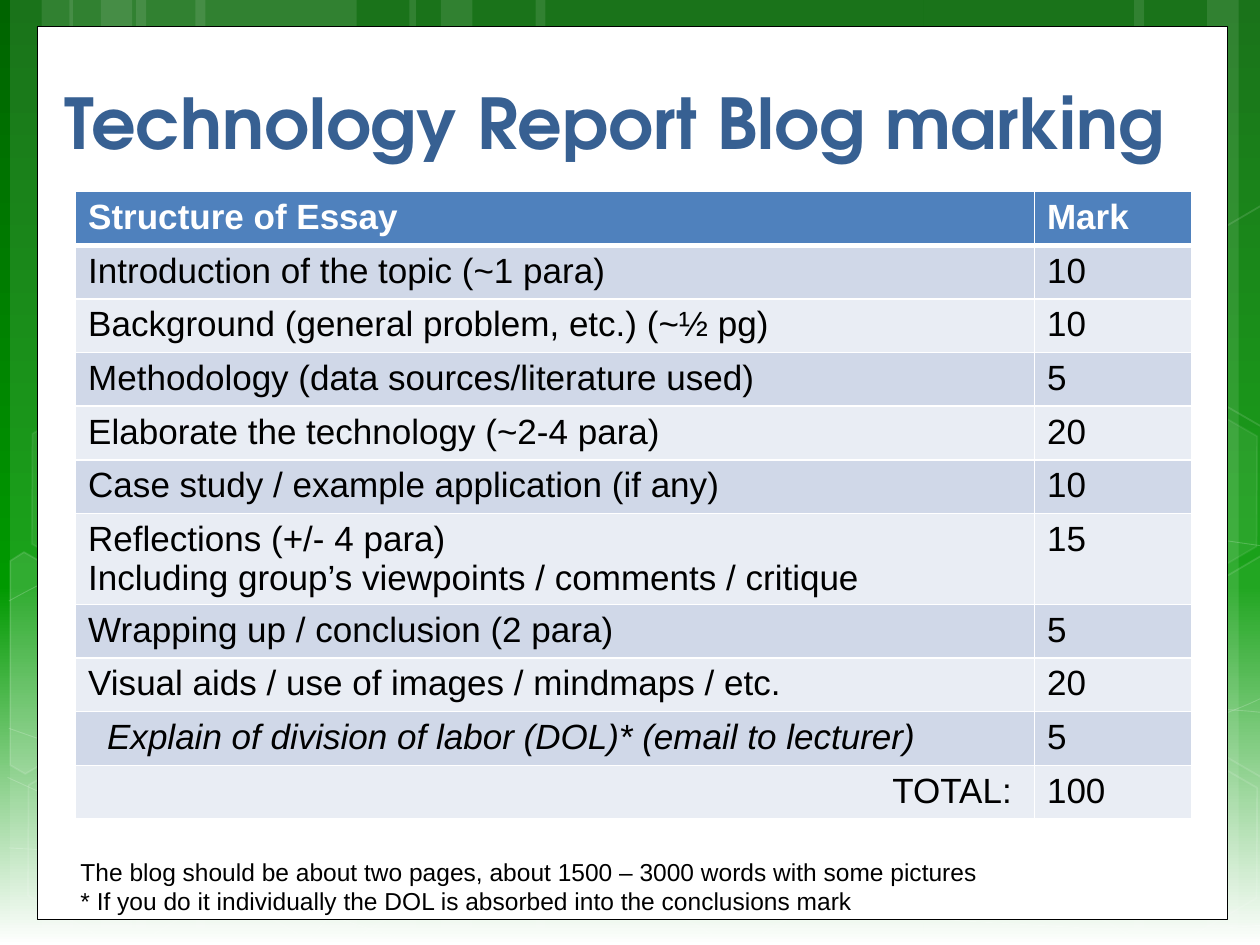
import math
from copy import deepcopy

from lxml import etree
from pptx import Presentation
from pptx import util as u
from pptx.dml.color import RGBColor
from pptx.enum import shapes, text
from pptx.oxml import ns

WHITE = RGBColor(0xFF, 0xFF, 0xFF)
BLACK = RGBColor(0, 0, 0)
DARK_GREEN = RGBColor(0, 0x64, 0)
GREEN = RGBColor(0, 0x99, 0)
TITLE_BLUE = RGBColor(0x37, 0x60, 0x92)
HEADER_BLUE = RGBColor(0x4F, 0x81, 0xBD)
BAND_DARK = RGBColor(0xD0, 0xD8, 0xE8)
BAND_LIGHT = RGBColor(0xE9, 0xED, 0xF4)

# Background stripes: left, width, rotation
STRIPES = [
    (1.08, 1.75, 0), (0.08, 0.5, 0), (0.33, 0.83, 0), (1.55, 1.75, 0),
    (0.55, 0.5, 0), (0.8, 0.83, 0), (7.33, 1.75, 180), (9.58, 0.5, 180),
    (9, 0.83, 180), (4.25, 3.08, 0), (3.25, 0.5, 0), (3.5, 0.83, 0),
]
# Each curve: a start point, then three points per Bezier segment
CURVES = [
    [(0.07, 6.73), (0.61, 6.76), (1.15, 6.79), (1.9, 6.78), (2.65, 6.77),
     (3.58, 6.75), (4.58, 6.65), (5.58, 6.55), (7, 6.36), (7.92, 6.17),
     (8.83, 5.98), (9.77, 5.68), (10.07, 5.51)],
    [(0.07, 4.77), (0.36, 4.61), (0.65, 4.46), (1.21, 4.31), (1.78, 4.16),
     (2.59, 3.94), (3.47, 3.87), (4.36, 3.8), (5.44, 3.79), (6.54, 3.87),
     (7.64, 3.95), (9.47, 4.26), (10.07, 4.34)],
    [(0.06, 6.17), (1.27, 6.72), (2.47, 7.27), (3.34, 7.49)],
    [(0.07, 5.78), (0.38, 5.89), (0.7, 6), (1.28, 6.16), (1.86, 6.31),
     (2.73, 6.56), (3.57, 6.73), (4.4, 6.9), (5.45, 7.08), (6.28, 7.18),
     (7.11, 7.29), (8, 7.33), (8.53, 7.36), (9.05, 7.4), (9.19, 7.38),
     (9.45, 7.38), (9.71, 7.37), (9.89, 7.35), (10.07, 7.34)],
    [(2.42, 7.49), (2.6, 7.29), (2.78, 7.09), (3.02, 6.91), (3.26, 6.73),
     (3.6, 6.53), (3.88, 6.39), (4.16, 6.25), (4.33, 6.19), (4.7, 6.09),
     (5.06, 5.99), (5.73, 5.85), (6.08, 5.78), (6.44, 5.71), (6.49, 5.71),
     (6.8, 5.69), (7.11, 5.66), (7.6, 5.63), (7.94, 5.62), (8.29, 5.61),
     (8.86, 5.62), (8.86, 5.62), (9.1, 5.62), (9.3, 5.62), (9.53, 5.62),
     (9.71, 5.63), (9.88, 5.64), (9.97, 5.65), (10.06, 5.66),
     (10.03, 5.65), (10.06, 5.66)],
]
# Hexagons: left, top, fill opacity, line opacity
HEXAGONS = [
    (3.34, 0.36, 4, 8), (4.97, 5.89, 6, 12), (0.11, 5.91, 0, 12),
    (0.14, 3.12, 7, 8), (1.74, 5.92, 0, 12), (8.34, 5.93, 0, 12),
    (8.34, 3.14, 7, 8),
]
# Hexagons cut at the slide edge: centre, outline, fill opacity
CUT_HEXAGONS = [
    ((0.36, 5.35), [(0.08, 4.45), (0.19, 4.38), (0.96, 4.82), (0.95, 5.7),
                    (0.2, 6.14), (0.08, 6.07)], 10),
    ((9.85, 5.2), [(9.26, 4.85), (10.01, 4.41), (10.09, 4.46),
                   (10.09, 6.13), (10.02, 6.17), (9.26, 5.73)], 4),
    ((9.85, 2.41), [(9.26, 2.07), (10.01, 1.63), (10.1, 1.68),
                    (10.09, 3.35), (10.02, 3.39), (9.26, 2.95)], 0),
]
MARKS = [
    ("Structure of Essay", "Mark"),
    ("Introduction of the topic (~1 para)", "10"),
    ("Background (general problem, etc.) (~½ pg)", "10"),
    ("Methodology (data sources/literature used)", "5"),
    ("Elaborate the technology (~2-4 para)", "20"),
    ("Case study / example application (if any)", "10"),
    ("Reflections (+/- 4 para)\n"
     "Including group’s viewpoints / comments / critique", "15"),
    ("Wrapping up / conclusion (2 para)", "5"),
    ("Visual aids / use of images / mindmaps / etc.", "20"),
    ("Explain of division of labor (DOL)* (email to lecturer)", "5"),
    ("TOTAL:", "100"),
]


def turn(points, centre, degrees):
    c, s = math.cos(math.radians(degrees)), math.sin(math.radians(degrees))
    cx, cy = centre
    return [(cx + (x - cx) * c - (y - cy) * s, cy + (x - cx) * s + (y - cy) * c)
            for x, y in points]


class Deck:
    font = "Arial"

    def __init__(self, prs):
        self.s = prs.slides.add_slide(prs.slide_layouts[5])

    def background(self, stops):
        fill = self.s.background.fill
        fill.gradient()
        fill.gradient_angle = 270
        gs_list = self.s.element.find(".//" + ns.qn("a:gsLst"))
        gs_list.append(deepcopy(gs_list[-1]))
        for stop, (pos, color) in zip(fill.gradient_stops, stops):
            stop.position = pos
            stop.color.rgb = color

    def paint(self, sp, fill=100, line=0, width=1, line_color=WHITE):
        """White fill and an outline, each with an opacity in percent."""
        sp.shadow.inherit = False
        parts = ((sp.fill, fill, WHITE, ""), (sp.line.fill, line, line_color, "a:ln/"))
        for part, opacity, color, where in parts:
            if not opacity:
                part.background()
                continue
            part.solid()
            part.fore_color.rgb = color
            if opacity < 100:
                clr = sp.element.spPr.find(where + "a:solidFill/a:srgbClr", sp.element.nsmap)
                etree.SubElement(clr, ns.qn("a:alpha"), val=str(opacity * 1000))
        if line:
            sp.line.width = u.Pt(width)

    def shape(self, kind, box, rot=0, **look):
        sp = self.s.shapes.add_shape(kind, *map(u.Inches, box))
        sp.rotation = rot
        self.paint(sp, **look)
        return sp

    def outline(self, points, close, rot=0, **look):
        pts = [(u.Inches(x), u.Inches(y)) for x, y in points]
        builder = self.s.shapes.build_freeform(*pts[0])
        builder.add_line_segments(pts[1:], close=close)
        sp = builder.convert_to_shape()
        sp.rotation = rot
        self.paint(sp, **look)
        return sp

    def curve(self, points, **look):
        """Turn each three straight segments into one Bezier segment."""
        sp = self.outline(points, False, fill=0, **look)
        lines = list(sp.element.iter(ns.qn("a:lnTo")))
        for i in range(0, len(lines), 3):
            bezier = etree.Element(ns.qn("a:cubicBezTo"))
            lines[i].addprevious(bezier)
            for line in lines[i:i + 3]:
                bezier.append(line[0])
                line.getparent().remove(line)

    def style(self, tf, size, color, bold=False, font=None):
        for p in tf.paragraphs:
            p.font.name = font or self.font
            p.font.size = u.Pt(size)
            p.font.bold = bold
            p.font.color.rgb = color

    def title(self, words, box):
        sp = self.s.shapes.title
        sp.left, sp.top, sp.width, sp.height = map(u.Inches, box)
        sp.element.getparent().append(sp.element)  # in front of the panel
        tf = sp.text_frame
        tf.text = words
        tf.vertical_anchor = text.MSO_ANCHOR.BOTTOM
        tf.paragraphs[0].alignment = text.PP_ALIGN.LEFT
        self.style(tf, 40, TITLE_BLUE, True, "TeX Gyre Adventor")

    def borders(self, cell, top, bottom):
        tc_pr = cell._tc.get_or_add_tcPr()
        for i, (side, width) in enumerate(zip("LRTB", (1, 1, top, bottom))):
            ln = etree.Element(ns.qn("a:ln" + side), w=str(u.Pt(width)))
            fill = etree.SubElement(ln, ns.qn("a:solidFill"))
            etree.SubElement(fill, ns.qn("a:srgbClr"), val=str(WHITE))
            tc_pr.insert(i, ln)

    def table(self, rows, box, widths):
        frame = self.s.shapes.add_table(len(rows), len(widths), *map(u.Inches, box))
        table = frame.table
        for col, width in zip(table.columns, widths):
            col.width = u.Inches(width)
        for i, values in enumerate(rows):
            for j, value in enumerate(values):
                cell = table.cell(i, j)
                cell.text = value
                cell.fill.solid()
                cell.fill.fore_color.rgb = (
                    HEADER_BLUE if i == 0 else BAND_DARK if i % 2 else BAND_LIGHT)
                self.style(cell.text_frame, 20, BLACK if i else WHITE, i == 0)
                self.borders(cell, 3 if i == 1 else 1, 1 if i else 3)
        return table

    def note(self, words, box):
        tf = self.s.shapes.add_textbox(*map(u.Inches, box)).text_frame
        tf.text = words
        tf.word_wrap = False
        tf.auto_size = text.MSO_AUTO_SIZE.SHAPE_TO_FIT_TEXT
        self.style(tf, 14, BLACK)


def main():
    prs = Presentation()
    prs.slide_width, prs.slide_height = u.Inches(10), u.Inches(7.5)
    deck = Deck(prs)
    kinds = shapes.MSO_SHAPE

    # Green backdrop
    deck.background([(0, DARK_GREEN), (0.62, GREEN), (1, WHITE)])
    for left, width, rot in STRIPES:
        deck.shape(kinds.RECTANGLE, (left, 0, width, 7.5), rot, fill=10)
    for points in CURVES:
        deck.curve(points, line=20, width=0.5)
    for left, top, fill, line in HEXAGONS:
        sp = deck.shape(kinds.HEXAGON, (left, top, 1.75, 1.52), 30, fill=fill, line=line)
        sp.adjustments[0] = 0.285
    for centre, points, fill in CUT_HEXAGONS:
        deck.outline(turn(points, centre, -30), True, 30, fill=fill, line=12)

    # White panel and title
    deck.shape(kinds.RECTANGLE, (0.3, 0.21, 9.44, 7.09),
               line=100, width=0.5, line_color=BLACK)
    deck.title("Technology Report Blog marking", (0.41, 0.36, 9.1, 0.99))

    # Marking table
    table = deck.table(MARKS, (0.6, 1.52, 8.86, 4.69), (7.61, 1.25))
    labor, total = table.cell(9, 0), table.cell(10, 0)
    labor.margin_left = u.Inches(0.25)
    labor.text_frame.paragraphs[0].font.italic = True
    total.margin_right = u.Inches(0.18)
    total.text_frame.paragraphs[0].alignment = text.PP_ALIGN.RIGHT

    # Footnotes
    deck.note("The blog should be about two pages, about 1500 – 3000 words with some pictures\n"
              "* If you do it individually the DOL is absorbed into the conclusions mark",
              (0.54, 6.75, 7.35, 0.57))
    prs.save("out.pptx")


if __name__ == "__main__":
    main()
